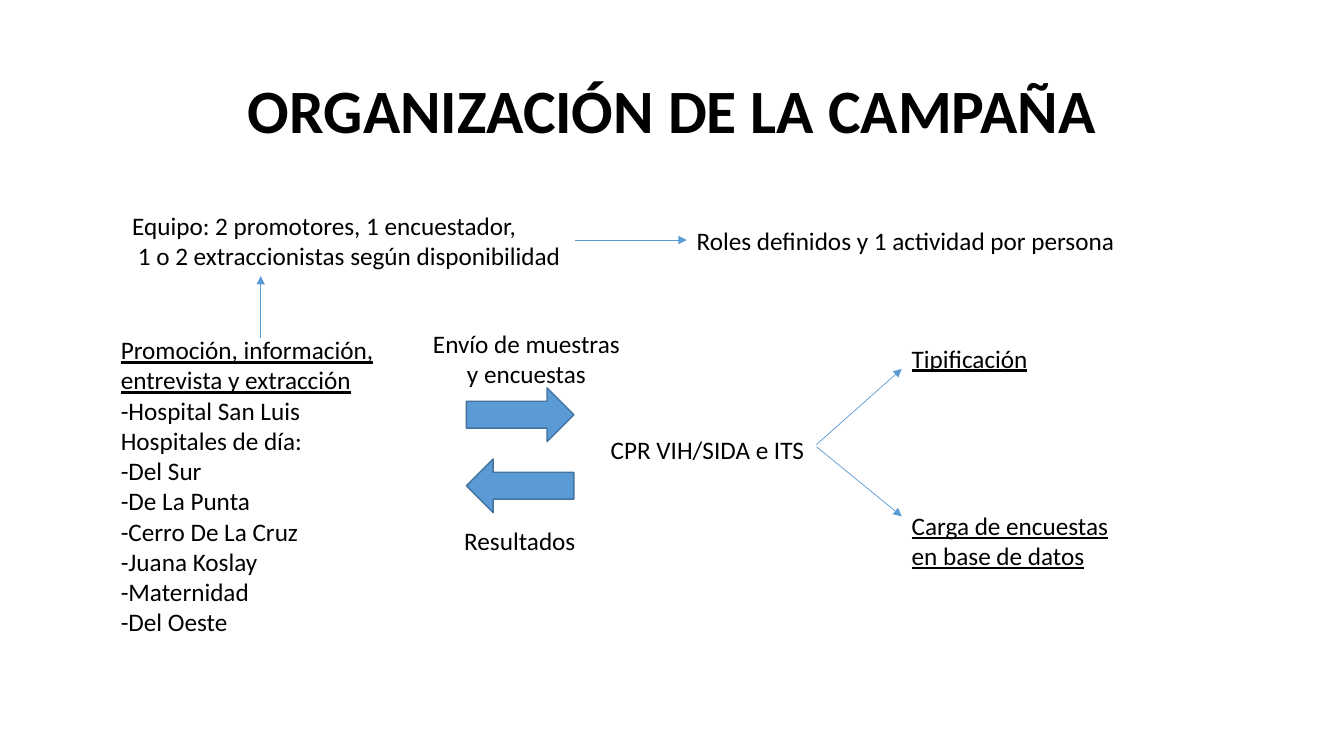
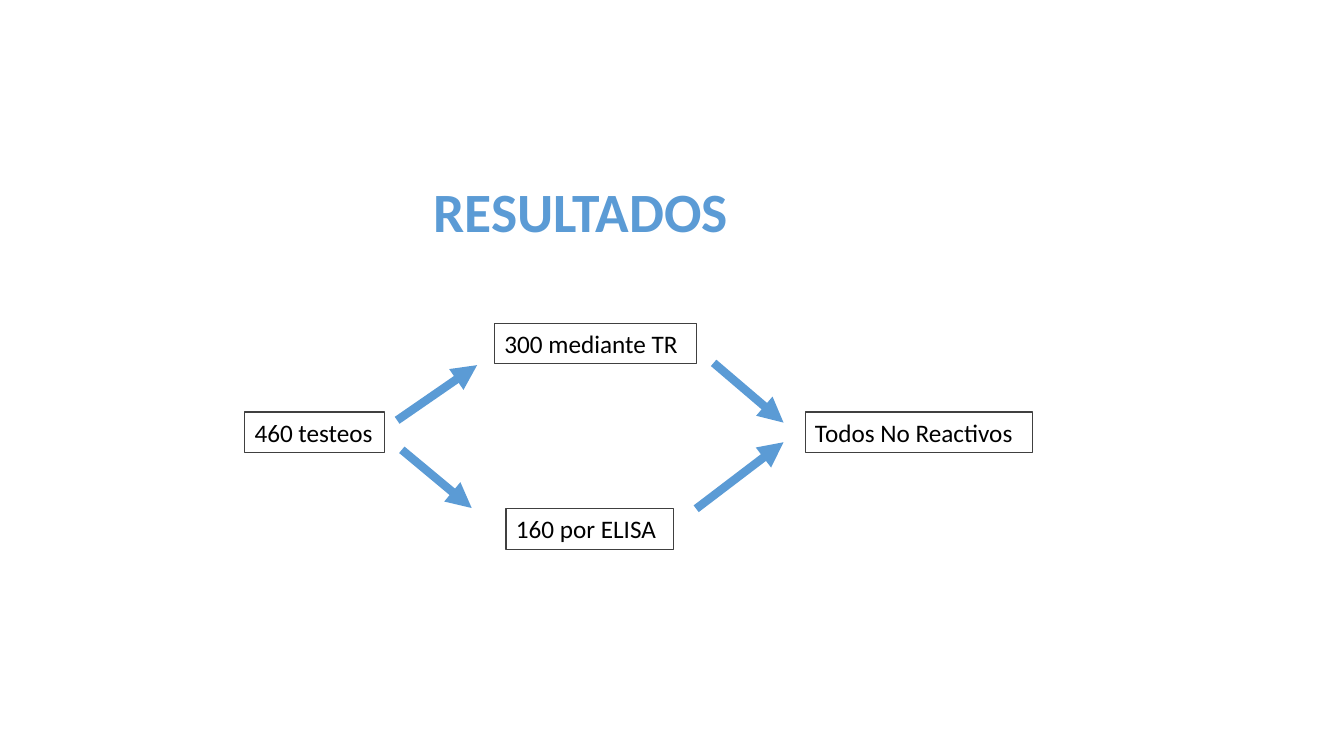
from dataclasses import dataclass
from typing import NamedTuple

from lxml import etree
from pptx import Presentation, util as u
from pptx.dml.color import RGBColor
from pptx.enum import shapes, text
from pptx.oxml.ns import qn


@dataclass(frozen=True)
class Theme:
    font: str = "Calibri"
    black: RGBColor = RGBColor(0, 0, 0)
    blue: RGBColor = RGBColor(0x5B, 0x9B, 0xD5)
    dark_blue: RGBColor = RGBColor(0x43, 0x73, 0x9E)
    gray: RGBColor = RGBColor(0x40, 0x40, 0x40)
    white: RGBColor = RGBColor(255, 255, 255)
    body_size: float = 18
    thin: float = 0.5
    thick: float = 6


THEME = Theme()
WIDTH, HEIGHT = u.Inches(13.333), u.Inches(7.5)
LEFT, CENTER = text.PP_ALIGN.LEFT, text.PP_ALIGN.CENTER
ONE_LINE, TWO_LINES = 5.33, 9.5
TITLE_WIDTH, TITLE_HEIGHT = 86.25, 19.33
BRANCH_LEFT = 67.1
ROLES_LEFT, ROLES_MIDDLE = 51.1, 31.75


class Frame(NamedTuple):
    """Left, top, width and height in percent of the slide's size."""
    left: float
    top: float
    width: float
    height: float = ONE_LINE


class Label(NamedTuple):
    lines: list[str]
    frame: Frame
    underlined: int = 0
    align: text.PP_ALIGN = LEFT
    border: float = 0


class Arrow(NamedTuple):
    """Start and end in percent of the slide's size."""
    start: tuple[float, float]
    end: tuple[float, float]


CAMPAIGN_LABELS = [
    Label(["Promoción, información, entrevista y extracción", "-Hospital San Luis",
           "Hospitales de día:", "-Del Sur", "-De La Punta", "-Cerro De La Cruz",
           "-Juana Koslay", "-Maternidad", "-Del Oeste"],
          Frame(8.25, 43.6, 23.7, 41.7), underlined=1),
    Label(["CPR VIH/SIDA e ITS"], Frame(44.7, 56.8, 16.05)),
    Label(["Envío de muestras", "y encuestas"],
          Frame(31, 42.8, 15.6, TWO_LINES), align=CENTER),
    Label(["Tipificación"], Frame(BRANCH_LEFT, 44.7, 10.3), underlined=1),
    Label(["Carga de encuestas", "en base de datos"],
          Frame(BRANCH_LEFT, 66.8, 16.3, TWO_LINES), underlined=2),
    Label(["Resultados"], Frame(33.8, 68.8, 9.9)),
    Label(["Equipo: 2 promotores, 1 encuestador,",
           " 1 o 2 extraccionistas según disponibilidad"],
          Frame(9.1, 27.1, 34.65, TWO_LINES)),
]
ROLES_LABEL = Label(["Roles definidos y 1 actividad por persona"],
                    Frame(ROLES_LEFT, ROLES_MIDDLE - ONE_LINE / 2, 33))
CAMPAIGN_ARROWS = [
    Arrow((60.75, 58.8), (BRANCH_LEFT, 48.8)),
    Arrow((60.75, 59.1), (BRANCH_LEFT, 68.3)),
    Arrow((19.4, 44.7), (19.4, 36.5)),
]
EXCHANGE_ARROWS = [
    (shapes.MSO_SHAPE.RIGHT_ARROW, Frame(34.7, 51.3, 8, 7.1)),
    (shapes.MSO_SHAPE.LEFT_ARROW, Frame(34.7, 60.7, 8, 7.1)),
]
RESULT_LABELS = [
    Label(["460 testeos"], Frame(18.2, 54.5, 10.4), border=1),
    Label(["300 mediante TR"], Frame(36.8, 42.8, 15), border=0.75),
    Label(["160 por ELISA"], Frame(37.65, 67.3, 12.5), border=0.75),
    Label(["Todos No Reactivos"], Frame(59.9, 54.5, 16.9), border=0.75),
]
RESULT_ARROWS = [
    Arrow((29.55, 55.6), (35.5, 48.3)),
    Arrow((29.9, 59.5), (35.1, 67.2)),
    Arrow((53.1, 48), (58.3, 55.9)),
    Arrow((51.8, 67.3), (58.3, 58.5)),
]


def across(share: float) -> int:
    return round(WIDTH * share / 100)


def down(share: float) -> int:
    return round(HEIGHT * share / 100)


def place(frame: Frame) -> tuple[int, int, int, int]:
    return across(frame.left), down(frame.top), across(frame.width), down(frame.height)


def format_paragraph(paragraph, size: float, color: RGBColor, align: text.PP_ALIGN,
                     bold: bool = False, underline: bool = False) -> None:
    paragraph.alignment = align
    for run in paragraph.runs:
        font = run.font
        font.name, font.size, font.color.rgb = THEME.font, u.Pt(size), color
        font.bold, font.underline = bold, underline


def add_titled_slide(presentation, title: str, frame: Frame, size: float, color: RGBColor):
    slide = presentation.slides.add_slide(presentation.slide_layouts[5])
    shape = slide.shapes.title
    shape.left, shape.top, shape.width, shape.height = place(frame)
    shape.text_frame.text = title
    shape.text_frame.auto_size = text.MSO_AUTO_SIZE.NONE
    shape.text_frame.vertical_anchor = text.MSO_ANCHOR.MIDDLE
    paragraph = shape.text_frame.paragraphs[0]
    paragraph.line_spacing = 0.9
    format_paragraph(paragraph, size, color, CENTER, bold=True)
    return slide


def add_label(slide, label: Label):
    shape = slide.shapes.add_textbox(*place(label.frame))
    text_frame = shape.text_frame
    text_frame.text = "\n".join(label.lines)
    text_frame.word_wrap = True
    text_frame.margin_right = 0
    for index, paragraph in enumerate(text_frame.paragraphs):
        format_paragraph(paragraph, THEME.body_size, THEME.black, label.align,
                         underline=index < label.underlined)
    if label.border:
        shape.fill.solid()
        shape.fill.fore_color.rgb = THEME.white
        shape.line.color.rgb = THEME.gray
        shape.line.width = u.Pt(label.border)
    return shape


def add_arrow(slide, arrow: Arrow, weight: float):
    (x1, y1), (x2, y2) = arrow
    connector = slide.shapes.add_connector(
        shapes.MSO_CONNECTOR.STRAIGHT, across(x1), down(y1), across(x2), down(y2))
    connector.line.color.rgb = THEME.blue
    connector.line.width = u.Pt(weight)
    properties = connector.element.spPr
    etree.SubElement(properties.find(qn("a:ln")), qn("a:tailEnd"), type="triangle")
    etree.SubElement(properties, qn("a:effectLst"))
    return connector


def add_block_arrow(slide, kind: shapes.MSO_SHAPE, frame: Frame) -> None:
    shape = slide.shapes.add_shape(kind, *place(frame))
    shape.shadow.inherit = False
    shape.fill.solid()
    shape.fill.fore_color.rgb = THEME.blue
    shape.line.color.rgb = THEME.dark_blue
    shape.line.width = u.Pt(1)


def draw_flow(slide, labels: list[Label], arrows: list[Arrow], weight: float) -> None:
    for label in labels:
        add_label(slide, label)
    for arrow in arrows:
        add_arrow(slide, arrow, weight)


def build_campaign(presentation) -> None:
    slide = add_titled_slide(presentation, "ORGANIZACIÓN DE LA CAMPAÑA",
                             Frame(6.9, 5.3, TITLE_WIDTH, TITLE_HEIGHT), 44, THEME.black)
    for kind, frame in EXCHANGE_ARROWS:
        add_block_arrow(slide, kind, frame)
    draw_flow(slide, CAMPAIGN_LABELS, CAMPAIGN_ARROWS, THEME.thin)
    roles = add_label(slide, ROLES_LABEL)
    to_roles = Arrow((42.75, ROLES_MIDDLE), (ROLES_LEFT, ROLES_MIDDLE))
    add_arrow(slide, to_roles, THEME.thin).end_connect(roles, 1)


def build_results(presentation) -> None:
    slide = add_titled_slide(presentation, "RESULTADOS",
                             Frame(0.1, 18.7, TITLE_WIDTH, TITLE_HEIGHT), 39.6, THEME.blue)
    draw_flow(slide, RESULT_LABELS, RESULT_ARROWS, THEME.thick)


def main() -> None:
    presentation = Presentation()
    presentation.slide_width, presentation.slide_height = WIDTH, HEIGHT
    build_campaign(presentation)
    build_results(presentation)
    presentation.save("out.pptx")


if __name__ == "__main__":
    main()
